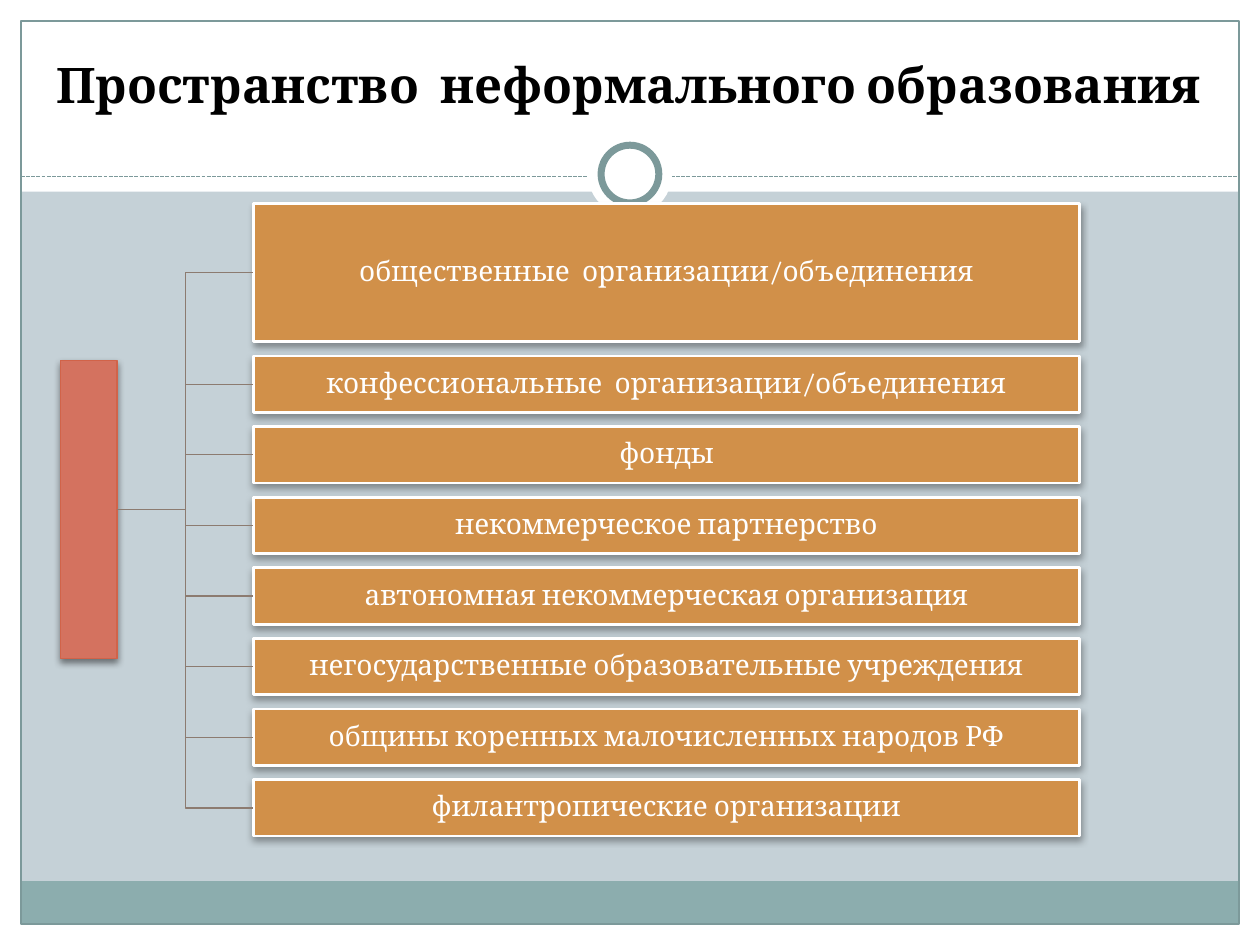
from lxml.etree import SubElement
from pptx import Presentation
from pptx.dml.color import RGBColor
from pptx.enum.dml import MSO_LINE
from pptx.enum.shapes import MSO_CONNECTOR, MSO_SHAPE
from pptx.enum.text import MSO_ANCHOR, MSO_AUTO_SIZE, PP_ALIGN
from pptx.oxml.ns import qn
from pptx.util import Pt

WHITE = RGBColor(0xFF, 0xFF, 0xFF)
BLACK = RGBColor(0x00, 0x00, 0x00)
BACKGROUND = RGBColor(0xC5, 0xD1, 0xD7)
TEAL = RGBColor(0x8C, 0xAD, 0xAE)
GREY_TEAL = RGBColor(0x7C, 0x99, 0x9A)
BROWN = RGBColor(0x8C, 0x7B, 0x70)
RED = RGBColor(0xD4, 0x72, 0x5F)
DARK_RED = RGBColor(0xD1, 0x63, 0x49)
ORANGE = RGBColor(0xD1, 0x90, 0x49)

WIDTH, HEIGHT, MARGIN = 720, 540, 12
INNER_WIDTH = WIDTH - 2 * MARGIN
HEADER_HEIGHT = 109.5
DIVIDER_TOP = 100.8
BOX_LEFT, BOX_TOP, BOX_WIDTH = 144.8, 116.3, 472.3
FIRST_HEIGHT, BOX_HEIGHT, GAP = 79.1, 32.27, 8.07

TITLE = "Пространство  неформального образования"
ORGANIZATIONS = [
    "общественные  организации/объединения",
    "конфессиональные  организации/объединения",
    "фонды",
    "некоммерческое партнерство",
    "автономная некоммерческая организация",
    "негосударственные образовательные учреждения",
    "общины коренных малочисленных народов РФ",
    "филантропические организации",
]

TITLE_FONT = {"name": "Cambria", "size": Pt(28), "bold": True}
BOX_FONT = {"name": "Cambria", "size": Pt(16), "bold": False}
TITLE_FRAME = {
    "word_wrap": True,
    "auto_size": MSO_AUTO_SIZE.NONE,
    "vertical_anchor": MSO_ANCHOR.MIDDLE,
}
BOX_FRAME = TITLE_FRAME | {
    f"margin_{side}": Pt(0.8) for side in ("left", "top", "right", "bottom")
}


def apply_format(target, values):
    """Set each attribute named in the format values."""
    for name, value in values.items():
        setattr(target, name, value)


def write_text(shape, text, frame_format, font_format, color, spacing):
    """Write one centred paragraph into a shape."""
    apply_format(shape.text_frame, frame_format)
    paragraph = shape.text_frame.paragraphs[0]
    apply_format(paragraph, {"alignment": PP_ALIGN.CENTER, "line_spacing": spacing})
    run = paragraph.add_run()
    run.text = text
    apply_format(run.font, font_format)
    run.font.color.rgb = color


def add_shape(slide, kind, bounds, fill=None, line=None, line_width=0.75):
    """Add a preset shape without shadow; a missing colour means none."""
    shape = slide.shapes.add_shape(kind, *map(Pt, bounds))
    shape.shadow.inherit = False
    if fill is None:
        shape.fill.background()
    else:
        shape.fill.solid()
        shape.fill.fore_color.rgb = fill
    if line is None:
        shape.line.fill.background()
    else:
        shape.line.color.rgb = line
        shape.line.width = Pt(line_width)
    return shape


def add_shadow(shape, opacity):
    """Give a shape a soft black shadow that falls downwards."""
    effects = shape.element.spPr.find(qn("a:effectLst"))
    shadow = SubElement(
        effects,
        qn("a:outerShdw"),
        blurRad=str(Pt(4)),
        dist=str(Pt(2)),
        dir="5400000",
        rotWithShape="0",
    )
    color = SubElement(shadow, qn("a:srgbClr"), val="000000")
    SubElement(color, qn("a:alpha"), val=str(opacity * 1000))


def add_line(slide, kind, color, start=(0, 0), end=(0, 0)):
    """Add a thin connector without shadow."""
    connector = slide.shapes.add_connector(kind, *map(Pt, (*start, *end)))
    connector.line.color.rgb = color
    connector.line.width = Pt(0.75)
    SubElement(connector.element.spPr, qn("a:effectLst"))
    return connector


def add_frame(slide):
    """Draw the white margins, header, footer band, border and ring."""
    rectangle, oval = MSO_SHAPE.RECTANGLE, MSO_SHAPE.OVAL
    for bounds in (
        (0, HEIGHT - MARGIN, WIDTH, MARGIN),
        (0, 0, WIDTH, HEADER_HEIGHT),
        (0, 0, MARGIN, HEIGHT),
        (WIDTH - MARGIN, 0, MARGIN, HEIGHT),
    ):
        add_shape(slide, rectangle, bounds, WHITE)
    add_shape(slide, rectangle, (MARGIN, 503.5, INNER_WIDTH, 24.5), TEAL)
    border = (MARGIN, MARGIN, INNER_WIDTH, HEIGHT - 2 * MARGIN)
    add_shape(slide, rectangle, border, line=GREY_TEAL)
    divider = add_line(
        slide,
        MSO_CONNECTOR.STRAIGHT,
        GREY_TEAL,
        (MARGIN, DIVIDER_TOP),
        (WIDTH - MARGIN, DIVIDER_TOP),
    )
    divider.line.dash_style = MSO_LINE.SQUARE_DOT
    add_shape(slide, oval, (336, 75.5, 48, 48), WHITE)
    add_shape(slide, oval, (343.5, 83, 33, 33), WHITE, GREY_TEAL, 4)


def add_title(slide):
    """Place the title above the header band."""
    title = slide.shapes.title
    bounds = {"left": 11.5, "top": 18, "width": 695.5, "height": 60}
    apply_format(title, {name: Pt(value) for name, value in bounds.items()})
    write_text(title, TITLE, TITLE_FRAME, TITLE_FONT, BLACK, 1.0)
    slide.shapes.element.append(title.element)


def add_organization(slide, text, top, height):
    """Add one organization box."""
    bounds = (BOX_LEFT, top, BOX_WIDTH, height)
    box = add_shape(slide, MSO_SHAPE.RECTANGLE, bounds, ORANGE, WHITE, 1.57)
    add_shadow(box, 35)
    write_text(box, text, BOX_FRAME, BOX_FONT, WHITE, 0.9)
    return box


def add_hierarchy(slide):
    """Join the root bar to the column of organizations."""
    bounds = (34.6, 206.2, 32.3, 170)
    root = add_shape(slide, MSO_SHAPE.RECTANGLE, bounds, RED, DARK_RED)
    add_shadow(root, 45)
    top = BOX_TOP
    for index, text in enumerate(ORGANIZATIONS):
        height = BOX_HEIGHT if index else FIRST_HEIGHT
        box = add_organization(slide, text, top, height)
        branch = add_line(slide, MSO_CONNECTOR.ELBOW, BROWN)
        branch.begin_connect(root, 3)
        branch.end_connect(box, 1)
        top += height + GAP


def main():
    """Build and save the presentation."""
    presentation = Presentation()
    size = {"slide_width": Pt(WIDTH), "slide_height": Pt(HEIGHT)}
    apply_format(presentation, size)
    slide = presentation.slides.add_slide(presentation.slide_layouts[5])
    slide.background.fill.solid()
    slide.background.fill.fore_color.rgb = BACKGROUND
    add_frame(slide)
    add_title(slide)
    add_hierarchy(slide)
    presentation.save("out.pptx")


if __name__ == "__main__":
    main()
